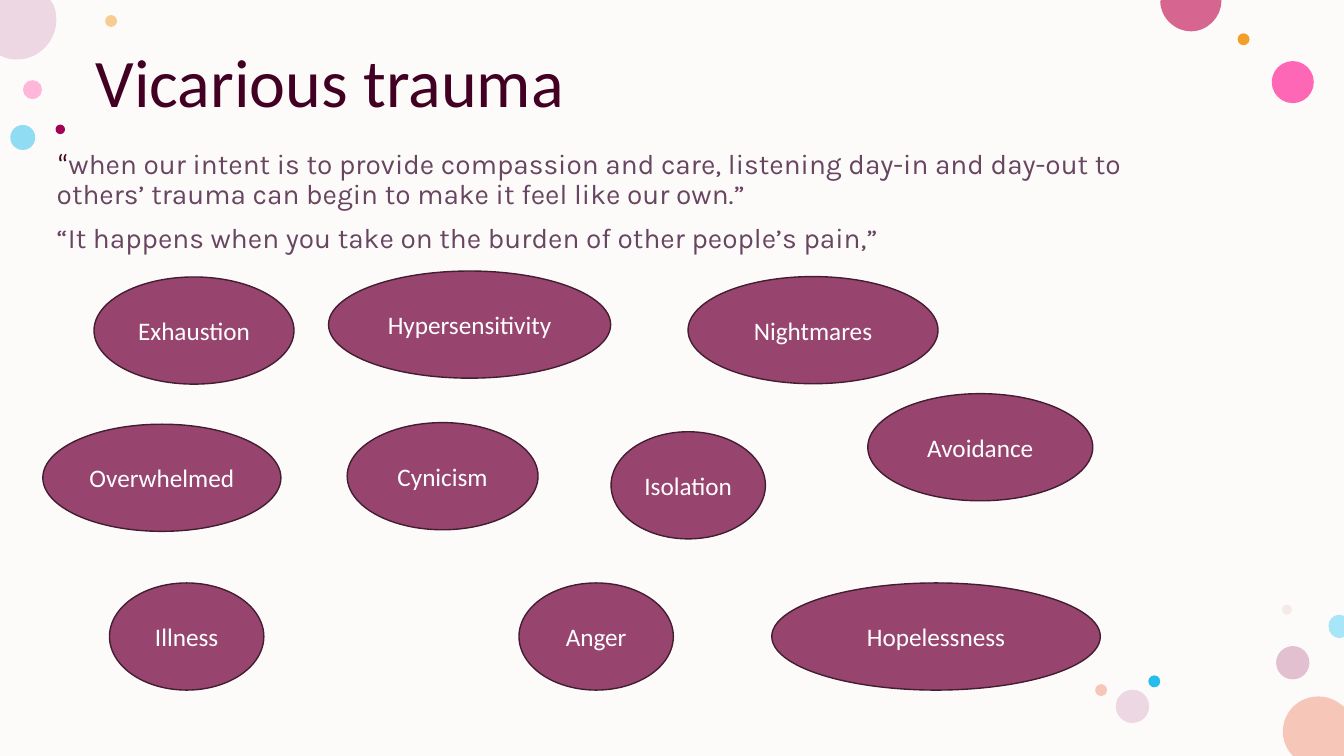
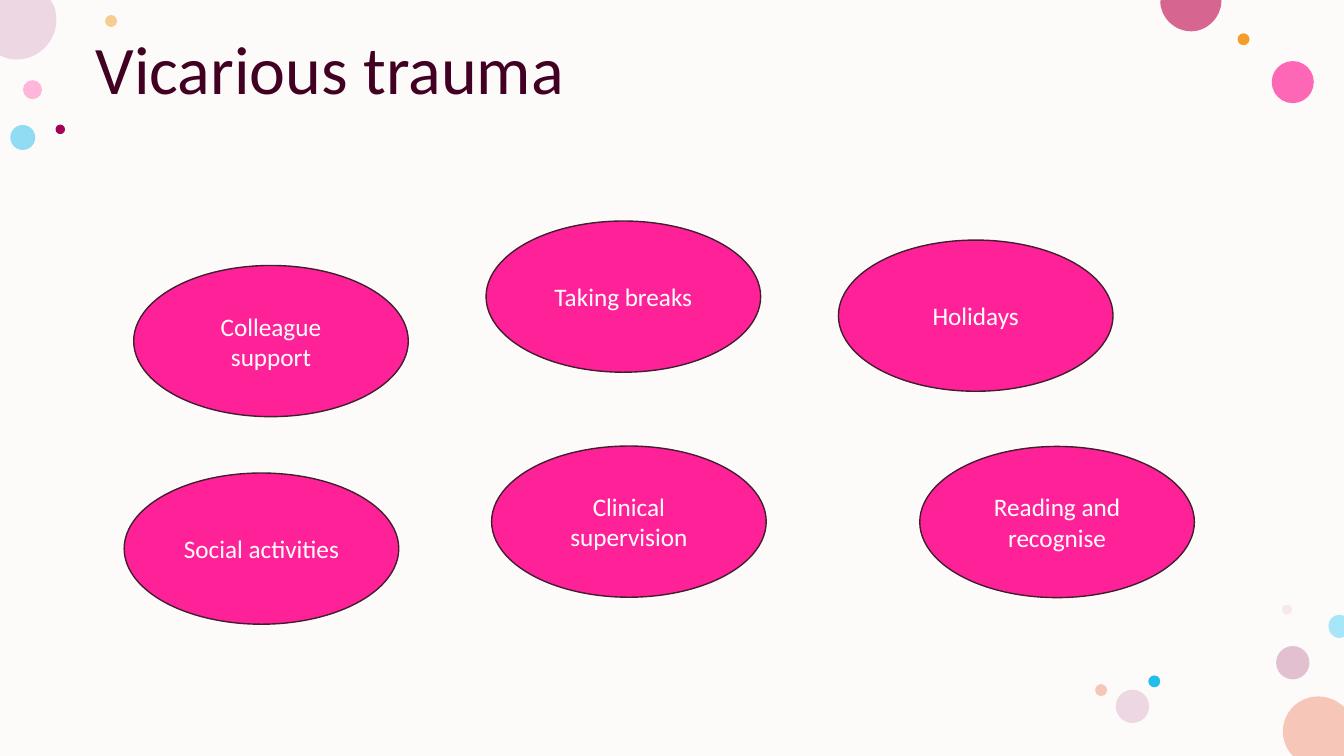
from dataclasses import dataclass

from lxml import etree
from pptx import Presentation
from pptx.dml.color import RGBColor
from pptx.enum.shapes import MSO_SHAPE
from pptx.enum.text import MSO_ANCHOR, PP_ALIGN
from pptx.oxml.ns import qn
from pptx.util import Cm, Pt

OVAL, RECTANGLE = MSO_SHAPE.OVAL, MSO_SHAPE.RECTANGLE
TOP, MIDDLE = MSO_ANCHOR.TOP, MSO_ANCHOR.MIDDLE
LEFT, CENTER = PP_ALIGN.LEFT, PP_ALIGN.CENTER

SLIDE_WIDTH, SLIDE_HEIGHT = 33.87, 19.05


@dataclass(frozen=True)
class Theme:
    background: str = "FDFBF9"
    heading: str = "420023"
    body: str = "684561"
    symptom: str = "97446E"
    remedy: str = "FF2197"
    outline: str = "421E30"
    on_bubble: str = "FFFFFF"
    pale_pink: str = "FF75BD"
    hot_pink: str = "FF2F9C"
    rose: str = "D6658F"
    mauve: str = "C987A8"
    lilac: str = "EDD7E2"
    blush: str = "E3BEBE"
    peach: str = "F6C7B9"
    orange: str = "F39E29"
    cyan: str = "24BEEE"
    pale_cyan: str = "A7E5F8"
    plum: str = "A40056"
    main_font: str = "Calibri"
    quote_font: str = "Karla"
    title_size: float = 48.6
    quote_size: float = 20
    bubble_size: float = 18


THEME = Theme()

# left, top, diameter (cm), colour, opacity (%)
DOTS = [
    (0.58, 2.02, 0.48, THEME.pale_pink, 50),
    (2.65, 0.38, 0.3, THEME.orange, 50),
    (32.16, 16.28, 0.84, THEME.mauve, 50),
    (0.26, 3.15, 0.63, THEME.cyan, 50),
    (32.05, 1.54, 1.06, THEME.hot_pink, 72),
    (31.19, 0.84, 0.3, THEME.orange, 100),
    (32.31, 15.24, 0.25, THEME.blush, 28),
    (28.94, 17.02, 0.3, THEME.cyan, 100),
    (28.12, 17.38, 0.84, THEME.lilac, 100),
    (27.6, 17.24, 0.3, THEME.peach, 100),
    (1.4, 3.14, 0.24, THEME.plum, 100),
]

# colour, start point, then lines (x, y) and curves (two controls and an end), in cm
CUT_DOTS = [
    (THEME.peach, (33.22, 17.55), [
        (33.48, 17.55, 33.68, 17.65, 33.87, 17.81), (33.87, 19.05), (32.59, 19.05),
        (32.54, 19), (32.41, 18.85, 32.33, 18.64, 32.33, 18.44),
        (32.33, 17.93, 32.74, 17.55, 33.22, 17.55)]),
    (THEME.lilac, (0, 0), [
        (1.27, 0), (1.35, 0.13), (1.4, 0.23, 1.42, 0.36, 1.42, 0.51),
        (1.42, 1.04, 0.97, 1.5, 0.43, 1.5), (0.28, 1.5, 0.15, 1.47, 0.05, 1.42),
        (0, 1.4)]),
    (THEME.rose, (29.26, 0), [
        (30.78, 0), (30.78, 0.03), (30.78, 0.43, 30.43, 0.79, 30.02, 0.79),
        (29.59, 0.79, 29.24, 0.43, 29.24, 0.03)]),
    (THEME.pale_cyan, (33.76, 15.49), [
        (33.87, 15.52), (33.87, 16.05), (33.76, 16.08),
        (33.6, 16.08, 33.48, 15.95, 33.48, 15.77),
        (33.48, 15.62, 33.6, 15.49, 33.76, 15.49)]),
]

QUOTES = [
    [
        ("“", {"font": THEME.main_font, "color": THEME.heading}),
        ("when our intent is to provide compassion and care, listening day-in and "
         "day-out to others’ trauma can begin to make it feel like our own.”", {}),
    ],
    [("“It happens when you take on the burden of other people’s pain,”", {})],
]

# text, left, top, width (cm)
SYMPTOM_HEIGHT = 2.7
SYMPTOMS = [
    ("Exhaustion", 2.37, 6.98, 5.04),
    ("Overwhelmed", 1.08, 10.69, 6),
    ("Anger", 13.08, 14.69, 3.89),
    ("Isolation", 15.4, 10.88, 3.89),
    ("Avoidance", 21.87, 9.92, 5.67),
    ("Illness", 2.76, 14.69, 3.89),
    ("Hypersensitivity", 8.28, 6.83, 7.11),
    ("Hopelessness", 19.45, 14.69, 8.28),
    ("Cynicism", 8.75, 10.65, 4.81),
    ("Nightmares", 17.34, 6.97, 6.3),
]

# text, left, top (cm)
REMEDY_WIDTH, REMEDY_HEIGHT = 6.92, 3.81
REMEDIES = [
    ("Colleague support", 3.37, 6.69),
    ("Clinical supervision", 12.39, 11.24),
    ("Taking breaks", 12.25, 5.57),
    ("Holidays", 21.13, 6.05),
    ("Reading and recognise", 23.18, 11.25),
    ("Social activities", 3.13, 11.92),
]


def write_text(frame, paragraphs, *, size, color, font=THEME.main_font,
               align=LEFT, anchor=TOP, line_spacing=1.0, space_before=0):
    """Fill a frame; each paragraph is a list of (text, overrides of font and color)."""
    frame.word_wrap = True
    frame.vertical_anchor = anchor
    for index, runs in enumerate(paragraphs):
        paragraph = frame.add_paragraph() if index else frame.paragraphs[0]
        paragraph.alignment = align
        paragraph.line_spacing = line_spacing
        paragraph.space_before = Pt(space_before)
        for text, overrides in runs:
            run = paragraph.add_run()
            run.text = text
            run.font.size = Pt(size)
            run.font.name = overrides.get("font", font)
            run.font.color.rgb = RGBColor.from_string(overrides.get("color", color))


class Deck:
    def __init__(self, theme):
        self.theme = theme
        self.presentation = Presentation()
        self.presentation.slide_width = Cm(SLIDE_WIDTH)
        self.presentation.slide_height = Cm(SLIDE_HEIGHT)
        self.slide = None

    def new_slide(self, title, title_top):
        blank = self.presentation.slide_layouts[6]
        self.slide = self.presentation.slides.add_slide(blank)
        self.shape(RECTANGLE, 0, 0, SLIDE_WIDTH, SLIDE_HEIGHT, self.theme.background)
        for left, top, diameter, color, opacity in DOTS:
            self.shape(OVAL, left, top, diameter, diameter, color, opacity)
        for cut_dot in CUT_DOTS:
            self.cut_dot(*cut_dot)
        self.text_box([[(title, {})]], 2.16, title_top, 29.62, 2.31, anchor=MIDDLE,
                      size=self.theme.title_size, color=self.theme.heading,
                      line_spacing=0.9)

    def paint(self, shape, color, opacity=100):
        """Give a shape a plain fill, no outline and no shadow."""
        shape.shadow.inherit = False
        shape.line.fill.background()
        shape.fill.solid()
        shape.fill.fore_color.rgb = RGBColor.from_string(color)
        if opacity < 100:
            tint = shape.fill._xPr.find(qn("a:solidFill"))[0]
            etree.SubElement(tint, qn("a:alpha"), val=str(opacity * 1000))

    def shape(self, preset, left, top, width, height, color, opacity=100):
        shape = self.slide.shapes.add_shape(
            preset, Cm(left), Cm(top), Cm(width), Cm(height))
        self.paint(shape, color, opacity)
        return shape

    def cut_dot(self, color, start, segments):
        """Draw a circle cut off at the slide's edge, from lines and Bézier curves."""
        builder = self.slide.shapes.build_freeform(Cm(start[0]), Cm(start[1]))
        builder.add_line_segments(
            [(Cm(segment[-2]), Cm(segment[-1])) for segment in segments], close=True)
        dot = builder.convert_to_shape()
        lines = list(dot.element.iter(qn("a:lnTo")))
        for line, segment in zip(lines, segments):
            if len(segment) == 2:
                continue
            line.tag = qn("a:cubicBezTo")
            for place in (0, 1):
                x, y = segment[2 * place:2 * place + 2]
                line.insert(place, etree.Element(
                    qn("a:pt"), x=str(Cm(x) - dot.left), y=str(Cm(y) - dot.top)))
        self.paint(dot, color)

    def text_box(self, paragraphs, left, top, width, height, **text_format):
        box = self.slide.shapes.add_textbox(Cm(left), Cm(top), Cm(width), Cm(height))
        write_text(box.text_frame, paragraphs, **text_format)

    def bubble(self, text, left, top, width, height, color):
        bubble = self.shape(OVAL, left, top, width, height, color)
        bubble.line.color.rgb = RGBColor.from_string(self.theme.outline)
        bubble.line.width = Pt(1)
        write_text(bubble.text_frame, [[(text, {})]], size=self.theme.bubble_size,
                   color=self.theme.on_bubble, align=CENTER, anchor=MIDDLE)


def main():
    deck = Deck(THEME)

    deck.new_slide("Vicarious trauma", title_top=1)
    deck.text_box(QUOTES, 1.18, 3.66, 29.62, 12.09, size=THEME.quote_size,
                  color=THEME.body, font=THEME.quote_font,
                  line_spacing=0.9, space_before=10)
    for text, left, top, width in SYMPTOMS:
        deck.bubble(text, left, top, width, SYMPTOM_HEIGHT, THEME.symptom)

    deck.new_slide("Vicarious trauma", title_top=0.68)
    for text, left, top in REMEDIES:
        deck.bubble(text, left, top, REMEDY_WIDTH, REMEDY_HEIGHT, THEME.remedy)

    deck.presentation.save("out.pptx")


if __name__ == "__main__":
    main()
